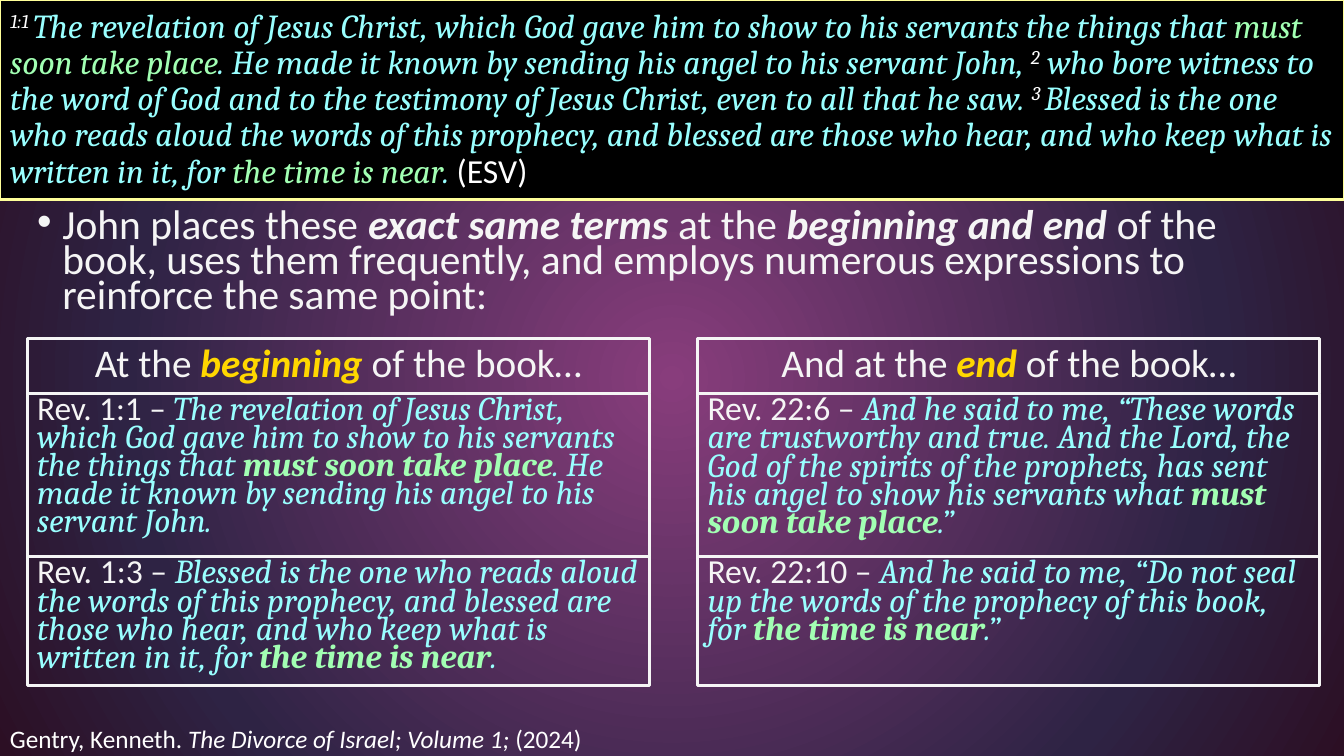
from lxml import etree
from pptx import Presentation
from pptx import oxml
from pptx import util as u
from pptx.dml.color import RGBColor
from pptx.enum import shapes, text
from pptx.oxml import ns

BLACK = RGBColor(0x00, 0x00, 0x00)
WHITE = RGBColor(0xFF, 0xFF, 0xFF)
OFF_WHITE = RGBColor(0xF5, 0xF5, 0xF5)
AQUA = RGBColor(0x99, 0xFF, 0xFF)
GREEN = RGBColor(0xA2, 0xFF, 0xB3)
GOLD = RGBColor(0xFF, 0xD7, 0x00)
PALE_YELLOW = RGBColor(0xFF, 0xFF, 0x99)
BACKDROP = ((0, "883D7C"), (71, "2E2344"), (100, "2C0F24"))

PLAIN = {"name": "Calibri", "bold": False, "italic": False}
SCRIPTURE = {"name": "Cambria", "bold": False, "italic": True}
FORMATS = {
    "plain": (PLAIN, OFF_WHITE),
    "strong": ({**PLAIN, "bold": True, "italic": True}, OFF_WHITE),
    "gold": ({**PLAIN, "bold": True, "italic": True}, GOLD),
    "white": (PLAIN, WHITE),
    "book": ({**PLAIN, "italic": True}, WHITE),
    "verse": (SCRIPTURE, AQUA),
    "key": (SCRIPTURE, GREEN),
    "strong key": ({**SCRIPTURE, "bold": True}, GREEN),
    "number": (SCRIPTURE, WHITE),
}

PASSAGE = [
    ("1:1 ", "number"),
    ("The revelation of Jesus Christ, which God gave him to show to his servants the things that ", "verse"),
    ("must soon take place", "key"),
    (". He made it known by sending his angel to his servant John, ", "verse"),
    ("2", "number"),
    (" who bore witness to the word of God and to the testimony of Jesus Christ, even to all that he saw. ", "verse"),
    ("3 ", "number"),
    ("Blessed is the one who reads aloud the words of this prophecy, and blessed are those who hear, "
     "and who keep what is written in it, for ", "verse"),
    ("the time is near", "key"),
    (". ", "verse"),
    ("(ESV)", "white"),
]
POINT = [
    ("John places these ", "plain"),
    ("exact same terms ", "strong"),
    ("at the ", "plain"),
    ("beginning and end", "strong"),
    (" of the book, uses them frequently, and employs numerous expressions to reinforce the same point:", "plain"),
]
CITATION = [
    ("Gentry, Kenneth. ", "white"),
    ("The Divorce of Israel; Volume 1; ", "book"),
    ("(2024)", "white"),
]
SOON = "must soon take place"
NEAR = "the time is near"
COLUMNS = [
    (0.27, ("At the ", "beginning"), [
        ("Rev. 1:1 – ", "The revelation of Jesus Christ, which God gave him to show to his servants "
         "the things that ", SOON, ". He made it known by sending his angel to his servant John.", 23.8),
        ("Rev. 1:3 – ", "Blessed is the one who reads aloud the words of this prophecy, and blessed are "
         "those who hear, and who keep what is written in it, for ", NEAR, ".", 24),
    ]),
    (6.92, ("And at the ", "end"), [
        ("Rev. 22:6 – ", "And he said to me, “These words are trustworthy and true. And the Lord, the God of "
         "the spirits of the prophets, has sent his angel to show his servants what ", SOON, ".”", 24),
        ("Rev. 22:10 – ", "And he said to me, “Do not seal up the words of the prophecy of this book, for ",
         NEAR, ".”", 24),
    ]),
]
COLUMN_WIDTH = 6.17
HEADING_TOP, HEADING_HEIGHT = 3.36, 0.54
VERSE_HEIGHTS = (1.62, 1.28)


class ScriptureSlide:
    def __init__(self, deck):
        self.slide = deck.slides.add_slide(deck.slide_layouts[5])

    def backdrop(self, stops):
        gradient = "".join(
            f'<a:gs pos="{place * 1000}"><a:srgbClr val="{colour}"/></a:gs>' for place, colour in stops)
        background = oxml.parse_xml(
            f'<p:bg {ns.nsdecls("p", "a")}><p:bgPr><a:gradFill><a:gsLst>{gradient}</a:gsLst>'
            '<a:path path="circle"><a:fillToRect l="50000" t="50000" r="50000" b="50000"/></a:path>'
            '</a:gradFill><a:effectLst/></p:bgPr></p:bg>')
        self.slide.element.cSld.insert(0, background)

    def wording(self, shape, runs, size, spacing=1.0, align=text.PP_ALIGN.LEFT, anchor=text.MSO_ANCHOR.TOP):
        frame = shape.text_frame
        frame.auto_size = text.MSO_AUTO_SIZE.NONE
        frame.word_wrap = True
        frame.vertical_anchor = anchor
        paragraph = frame.paragraphs[0]
        paragraph.alignment = align
        paragraph.line_spacing = spacing
        for words, style in runs:
            run = paragraph.add_run()
            run.text = words
            values, colour = FORMATS[style]
            for attribute, value in {**values, "size": u.Pt(size)}.items():
                setattr(run.font, attribute, value)
            run.font.color.rgb = colour
            if style == "number":
                run.font._element.set("baseline", "30000")
        return paragraph

    def passage(self, box, runs):
        title = self.slide.shapes.title
        for side, length in zip(("left", "top", "width", "height"), box):
            setattr(title, side, u.Inches(length))
        title.fill.solid()
        title.fill.fore_color.rgb = BLACK
        title.line.color.rgb = PALE_YELLOW
        title.line.width = u.Pt(2)
        self.wording(title, runs, 24, 0.9, anchor=text.MSO_ANCHOR.MIDDLE)

    def label(self, box, runs, size, spacing=1.0):
        return self.wording(self.slide.shapes.add_textbox(*map(u.Inches, box)), runs, size, spacing)

    def bullet(self, box, runs, size):
        properties = self.label(box, runs, size, 0.7)._p.get_or_add_pPr()
        properties.set("marL", str(u.Inches(0.25)))
        properties.set("indent", str(-u.Inches(0.25)))
        etree.SubElement(properties, ns.qn("a:buFont"), typeface="Arial")
        etree.SubElement(properties, ns.qn("a:buChar"), char="•")

    def cell(self, box, runs, size, spacing, align=text.PP_ALIGN.LEFT):
        frame = self.slide.shapes.add_shape(shapes.MSO_SHAPE.RECTANGLE, *map(u.Inches, box))
        frame.shadow.inherit = False
        frame.fill.background()
        frame.line.color.rgb = OFF_WHITE
        frame.line.width = u.Pt(2)
        self.wording(frame, runs, size, spacing, align)

    def column(self, left, heading, verses):
        opening, term = heading
        self.cell((left, HEADING_TOP, COLUMN_WIDTH, HEADING_HEIGHT),
                  [(opening, "plain"), (term, "gold"), (" of the book…", "plain")],
                  28, 0.9, text.PP_ALIGN.CENTER)
        top = HEADING_TOP + HEADING_HEIGHT
        for height, (reference, start, phrase, ending, size) in zip(VERSE_HEIGHTS, verses):
            self.cell((left, top, COLUMN_WIDTH, height),
                      [(reference, "plain"), (start, "verse"), (phrase, "strong key"), (ending, "verse")],
                      size, 0.7)
            top += height


def main():
    deck = Presentation()
    deck.slide_width, deck.slide_height = u.Inches(13.33), u.Inches(7.5)
    page = ScriptureSlide(deck)
    page.backdrop(BACKDROP)
    page.passage((0, 0, 13.33, 1.98), PASSAGE)
    page.bullet((0.27, 2.05, 12.64, 1.24), POINT, 29.6)
    for left, heading, verses in COLUMNS:
        page.column(left, heading, verses)
    page.label((0, 7.13, 13.33, 0.4), CITATION, 18)
    deck.save("out.pptx")


if __name__ == "__main__":
    main()
